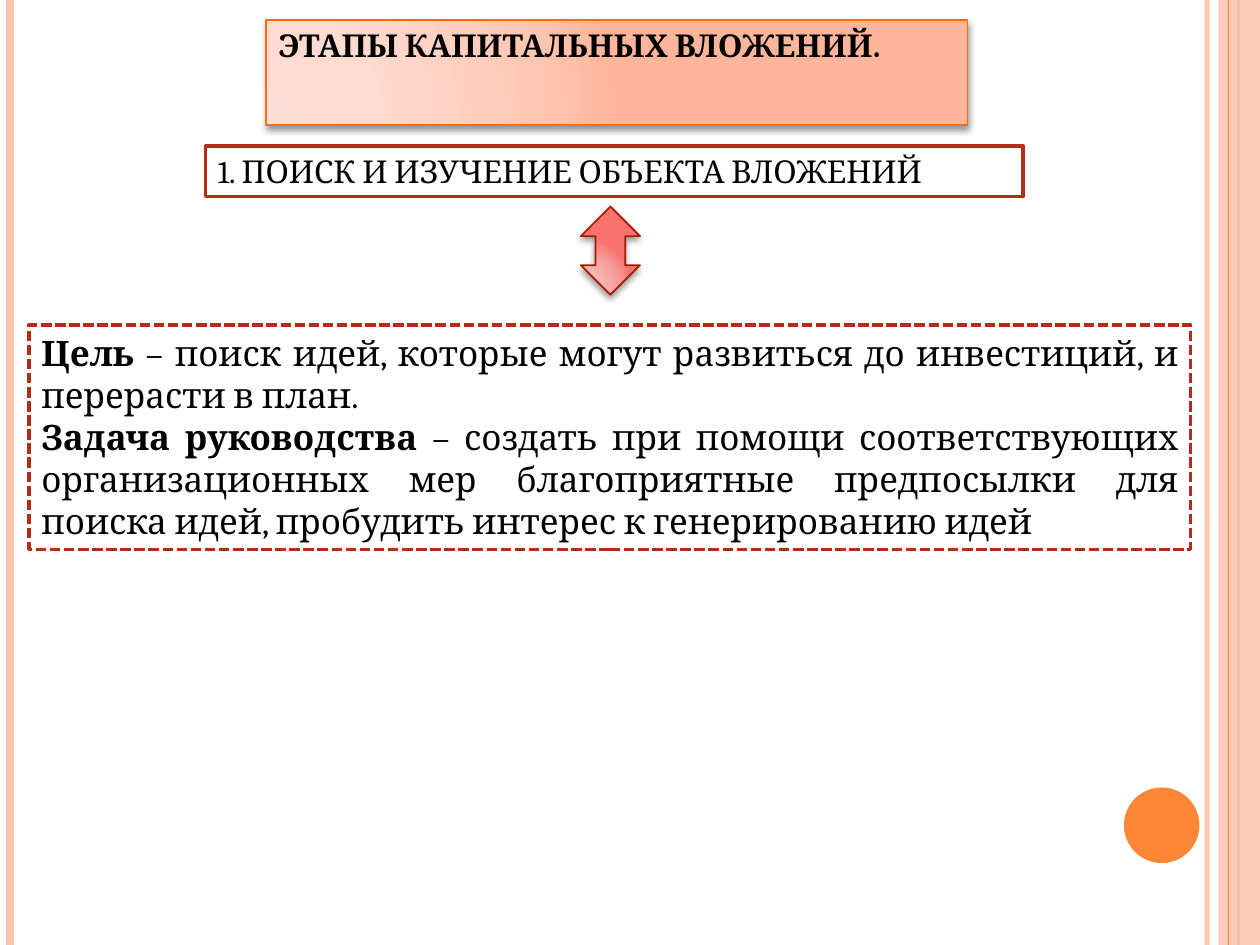
from lxml import etree
from pptx import Presentation
from pptx import util as u
from pptx.dml.color import RGBColor
from pptx.enum import dml, shapes, text
from pptx.oxml.ns import qn

PALE, ORANGE, RED = "FEC3AE", "FE8637", "B32C16"
STOPS = (0, 30, 75, 100)
PEACH = ("FFDED5", "FFDBD0", "FFC8B6", "FFB59B")
ROSE = ("F8C5C3", "F8BFBD", "F69B98", "F8736E")


def tint(code):
    return RGBColor.from_string(code)


def add(parent, tag, **attrs):
    """Append a drawing element with the given attributes."""
    return etree.SubElement(parent, qn(tag), {k: str(v) for k, v in attrs.items()})


def fade(root, percent):
    """Set the opacity of the colour found under root."""
    add(next(root.iter(qn("a:srgbClr"))), "a:alpha", val=percent * 1000)


class Deck:
    font = "Cambria"
    ink = "000000"

    def __init__(self, width, height):
        self.prs = Presentation()
        self.prs.slide_width, self.prs.slide_height = u.Inches(width), u.Inches(height)
        self.height = height
        self.slide = self.prs.slides.add_slide(self.prs.slide_layouts[5])

    def stripe(self, x, color, width, opacity=100):
        """Draw a vertical line over the full height."""
        line = self.slide.shapes.add_connector(
            shapes.MSO_CONNECTOR.STRAIGHT,
            u.Inches(x), 0, u.Inches(x), u.Inches(self.height))
        line.line.color.rgb = tint(color)
        line.line.width = u.Pt(width)
        props = line._element.spPr
        add(props, "a:effectLst")
        if opacity < 100:
            fade(props, opacity)

    def shape(self, kind, box, fill, edge=None, width=1, opacity=100):
        item = self.slide.shapes.add_shape(kind, *map(u.Inches, box))
        self.paint(item, fill, edge, width)
        if opacity < 100:
            fade(item._element.spPr, opacity)
        return item

    def paint(self, item, fill, edge, width):
        """Fill and outline; a tuple of colours gives a shadowed gradient."""
        item.shadow.inherit = False
        if isinstance(fill, tuple):
            self.glow(item, fill)
        else:
            item.fill.solid()
            item.fill.fore_color.rgb = tint(fill)
        if edge:
            item.line.color.rgb = tint(edge)
            item.line.width = u.Pt(width)
        else:
            item.line.fill.background()

    def glow(self, item, colors):
        """Give a radial gradient and a soft shadow below."""
        item.fill.gradient()
        props = item._element.spPr
        grad = props.find(qn("a:gradFill"))
        grad.clear()
        stops = add(grad, "a:gsLst")
        for pos, color in zip(STOPS, colors):
            add(add(stops, "a:gs", pos=pos * 1000), "a:srgbClr", val=color)
        ring = add(grad, "a:path", path="circle")
        add(ring, "a:fillToRect", l=5000, t=100000, r=120000, b=10000)
        shade = add(props.find(qn("a:effectLst")), "a:outerShdw",
                    blurRad=u.Pt(4), dist=u.Pt(2), dir=90 * 60000, rotWithShape=0)
        add(shade, "a:srgbClr", val="000000")
        fade(shade, 40)

    def label(self, item, paras, size, align=text.PP_ALIGN.LEFT):
        """Fill the shape with paragraphs made of (words, bold) runs."""
        frame = item.text_frame
        frame.word_wrap = True
        frame.auto_size = text.MSO_AUTO_SIZE.SHAPE_TO_FIT_TEXT
        frame.vertical_anchor = text.MSO_ANCHOR.TOP
        for i, runs in enumerate(paras):
            para = frame.add_paragraph() if i else frame.paragraphs[0]
            para.alignment = align
            para.font.name, para.font.size = self.font, u.Pt(size)
            para.font.color.rgb = tint(self.ink)
            for words, bold in runs:
                run = para.add_run()
                run.text, run.font.bold = words, bold

    def title(self, words, box, fill, edge):
        item = self.slide.shapes.title
        item.left, item.top, item.width, item.height = map(u.Inches, box)
        self.paint(item, fill, edge, 1)
        self.label(item, [[(words, True)]], 18)

    def panel(self, box, paras, size, **style):
        """Draw a white box with a red outline and text."""
        item = self.shape(shapes.MSO_SHAPE.RECTANGLE, box, "FFFFFF", RED, 2)
        self.label(item, paras, size, **style)
        return item


def main():
    deck = Deck(10, 7.5)
    kinds = shapes.MSO_SHAPE

    deck.stripe(9.58, PALE, 3, 93)
    deck.stripe(0.08, PALE, 4.5)
    deck.stripe(9.83, ORANGE, 1.5)
    deck.shape(kinds.RECTANGLE, (9.67, 0, 0.33, 7.5), PALE, opacity=87)
    deck.stripe(9.75, ORANGE, 0.75)
    deck.shape(kinds.OVAL, (8.92, 6.25, 0.6, 0.6), ORANGE)

    deck.title("ЭТАПЫ КАПИТАЛЬНЫХ ВЛОЖЕНИЙ.", (2.11, 0.16, 5.57, 0.4), PEACH, "FF6B0A")
    deck.panel((1.63, 1.16, 6.49, 0.4),
               [[("1. ПОИСК И ИЗУЧЕНИЕ ОБЪЕКТА ВЛОЖЕНИЙ", False)]], 18)
    deck.shape(kinds.UP_DOWN_ARROW, (4.61, 1.64, 0.47, 0.7), ROSE, "AC1800")
    goal = deck.panel((0.23, 2.58, 9.22, 1.78), [
        [("Цель", True),
         (" – поиск идей, которые могут развиться до инвестиций, "
          "и перерасти в план.", False)],
        [("Задача руководства ", True),
         ("– создать при помощи соответствующих организационных мер "
          "благоприятные предпосылки для поиска идей, пробудить интерес "
          "к генерированию идей", False)],
    ], 20, align=text.PP_ALIGN.JUSTIFY)
    goal.line.dash_style = dml.MSO_LINE.SQUARE_DOT

    deck.prs.save("out.pptx")


if __name__ == "__main__":
    main()
